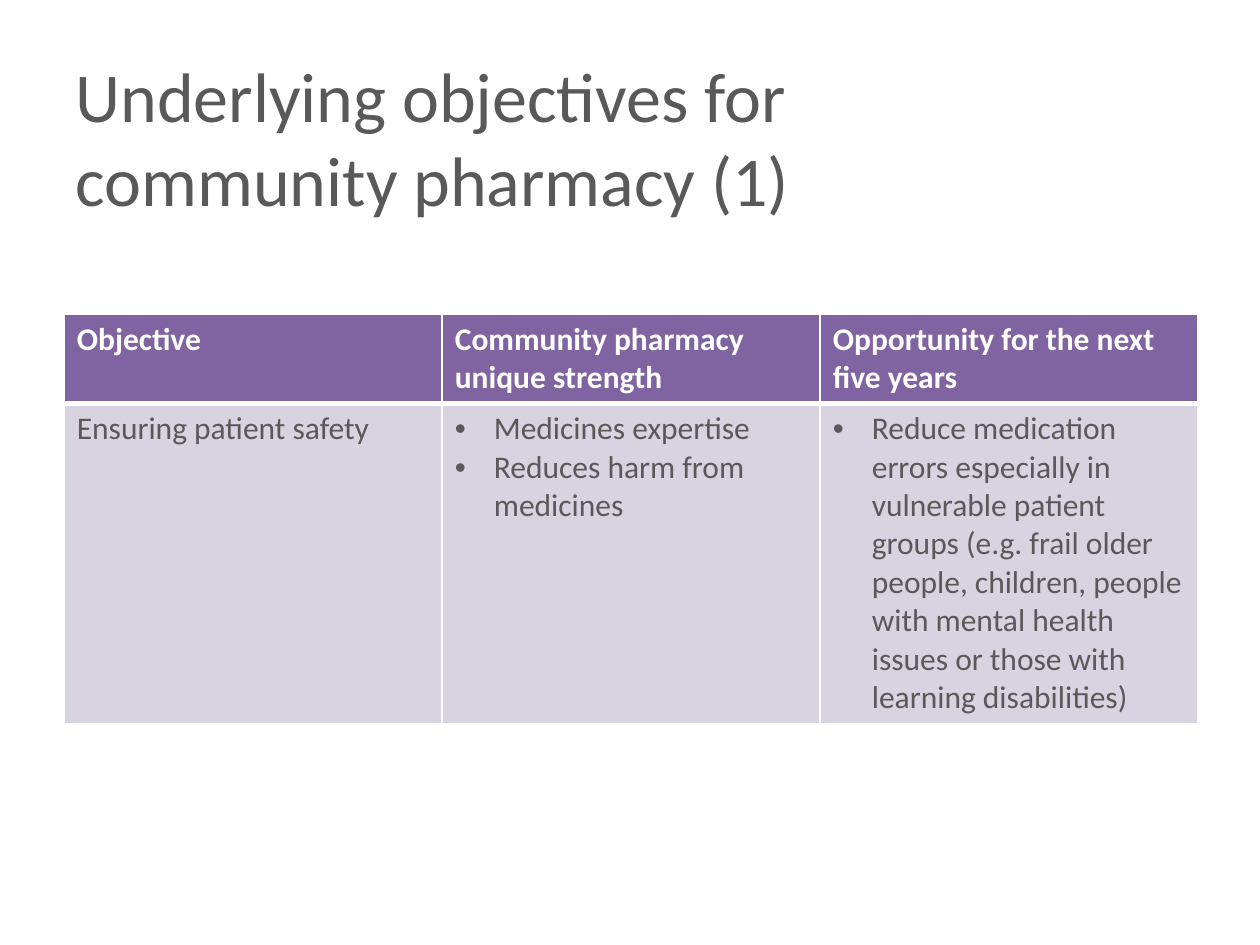
"""Builds the slide on underlying objectives for community pharmacy."""
from lxml.etree import SubElement
from pptx import Presentation
from pptx.dml.color import RGBColor
from pptx.enum.text import MSO_ANCHOR, MSO_AUTO_SIZE, PP_ALIGN
from pptx.oxml import parse_xml
from pptx.oxml.ns import nsdecls, qn
from pptx.util import Inches, Pt

COLOURS = {"ink": "595959", "white": "FFFFFF", "header": "8064A2", "body": "D8D3E0"}
ROWS = [
    [["Objective"], ["Community pharmacy unique strength"],
     ["Opportunity for the next five years"]],
    [["Ensuring patient safety"],
     ["Medicines expertise", "Reduces harm from medicines"],
     ["Reduce medication errors especially in vulnerable patient groups "
      "(e.g. frail older people, children, people with mental health issues "
      "or those with learning disabilities)"]],
]


class ObjectivesSlide:
    font_name = "Calibri"

    def __init__(self, slide):
        self.slide = slide

    def colour(self, name):
        return RGBColor.from_string(COLOURS[name])

    def add_run(self, paragraph, text, size, colour, bold=False):
        run = paragraph.add_run()
        run.text = text
        run.font.name = self.font_name
        run.font.size = Pt(size)
        run.font.bold = bold
        run.font.color.rgb = self.colour(colour)

    def add_title(self, text, left, top, width, height):
        title = self.slide.shapes.title
        title.left, title.top = Inches(left), Inches(top)
        title.width, title.height = Inches(width), Inches(height)
        frame = title.text_frame
        frame.word_wrap = True
        frame.auto_size = MSO_AUTO_SIZE.NONE
        frame.vertical_anchor = MSO_ANCHOR.MIDDLE
        paragraph = frame.paragraphs[0]
        paragraph.alignment = PP_ALIGN.LEFT
        self.add_run(paragraph, text, 40, "ink")

    def add_bullet(self, paragraph):
        properties = paragraph._p.get_or_add_pPr()
        properties.set("marL", str(Inches(0.31)))
        properties.set("indent", str(-Inches(0.31)))
        SubElement(properties, qn("a:buFont"), typeface="Arial")
        SubElement(properties, qn("a:buChar"), char="•")

    def set_borders(self, cell, top, bottom):
        properties = cell._tc.get_or_add_tcPr()
        widths = {"L": 1, "R": 1, "T": top, "B": bottom}
        for position, (side, width) in enumerate(widths.items()):
            properties.insert(position, parse_xml(
                f'<a:ln{side} {nsdecls("a")} w="{Pt(width)}"><a:solidFill>'
                f'<a:srgbClr val="{COLOURS["white"]}"/></a:solidFill></a:ln{side}>'))

    def fill_cell(self, cell, lines, is_header, bulleted):
        cell.fill.solid()
        cell.fill.fore_color.rgb = self.colour("header" if is_header else "body")
        self.set_borders(cell, *((1, 3) if is_header else (3, 1)))
        frame = cell.text_frame
        for number, line in enumerate(lines):
            paragraph = frame.add_paragraph() if number else frame.paragraphs[0]
            if bulleted:
                self.add_bullet(paragraph)
            self.add_run(paragraph, line, 18, "white" if is_header else "ink", is_header)

    def add_table(self, rows, left, top, width, heights):
        table = self.slide.shapes.add_table(
            len(rows), len(rows[0]), Inches(left), Inches(top),
            Inches(width), Inches(sum(heights))).table
        for row_number, (row, height) in enumerate(zip(rows, heights)):
            table.rows[row_number].height = Inches(height)
            for column, lines in enumerate(row):
                self.fill_cell(table.cell(row_number, column), lines,
                               row_number == 0, row_number > 0 and column > 0)


def main():
    presentation = Presentation()
    presentation.slide_width, presentation.slide_height = Inches(10), Inches(7.5)
    page = ObjectivesSlide(presentation.slides.add_slide(presentation.slide_layouts[5]))
    page.add_title("Underlying objectives for community pharmacy (1)", 0.5, 0.3, 6.39, 1.56)
    page.add_table(ROWS, 0.51, 2.49, 9, [0.7, 2.5])
    presentation.save("out.pptx")


if __name__ == "__main__":
    main()
